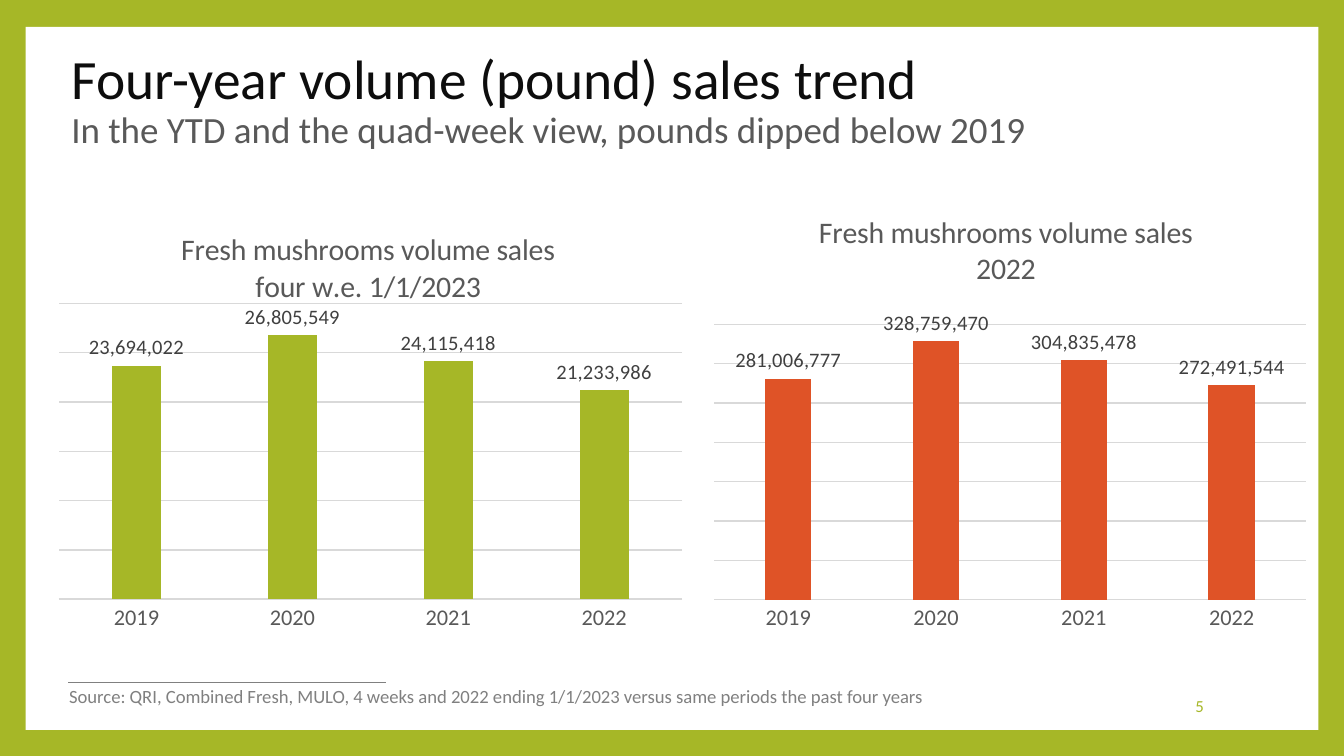
from lxml import etree
from pptx import Presentation
from pptx.chart.data import CategoryChartData
from pptx.dml.color import RGBColor
from pptx.enum import chart as ch, shapes, text
from pptx.oxml.ns import qn
from pptx.util import Pt

GREEN = RGBColor(0xA6, 0xB7, 0x27)
ORANGE = RGBColor(0xDF, 0x53, 0x27)
WHITE = RGBColor(0xFF, 0xFF, 0xFF)
INK = RGBColor(0x0D, 0x0D, 0x0D)
DARK = RGBColor(0x40, 0x40, 0x40)
BODY = RGBColor(0x59, 0x59, 0x59)
MUTED = RGBColor(0x80, 0x80, 0x80)
RULE = RGBColor(0xD9, 0xD9, 0xD9)
FONT = "Calibri"
YEARS = ["2019", "2020", "2021", "2022"]


def style(font, size, color):
    font.name, font.size, font.bold = FONT, Pt(size), False
    font.color.rgb = color


def add_run(paragraph, words, size, color):
    run = paragraph.add_run()
    run.text = words
    style(run.font, size, color)


def add_frame(slide, box):
    """White panel on the green ground, with the rule above the source."""
    slide.background.fill.solid()
    slide.background.fill.fore_color.rgb = GREEN
    panel = slide.shapes.add_shape(shapes.MSO_SHAPE.RECTANGLE, *map(Pt, box))
    panel.shadow.inherit = False
    panel.fill.solid()
    panel.fill.fore_color.rgb = WHITE
    panel.line.fill.background()
    # The panel goes behind the title placeholder
    slide.shapes.title._element.addprevious(panel._element)

    left, top, width, height = box
    x, y = left + 23, top + height - 25.4
    rule = slide.shapes.add_connector(
        shapes.MSO_CONNECTOR.STRAIGHT, Pt(x), Pt(y), Pt(x + 170), Pt(y))
    rule.line.color.rgb = MUTED
    rule.line.width = Pt(0.79)
    etree.SubElement(rule._element.spPr, qn("a:effectLst"))


def add_heading(slide, box, headline, subline):
    heading = slide.shapes.title
    heading.left, heading.top, heading.width, heading.height = map(Pt, box)
    frame = heading.text_frame
    frame.auto_size = text.MSO_AUTO_SIZE.NONE
    frame.vertical_anchor = text.MSO_ANCHOR.MIDDLE
    line = frame.paragraphs[0]
    line.alignment = text.PP_ALIGN.LEFT
    line.line_spacing = 0.9
    add_run(line, headline, 29.7, INK)
    line.add_line_break()
    add_run(line, subline, 19.8, BODY)


def add_note(slide, box, words, size, color, align, anchor, grow=False):
    frame = slide.shapes.add_textbox(*map(Pt, box)).text_frame
    frame.word_wrap = not grow
    if grow:
        frame.auto_size = text.MSO_AUTO_SIZE.SHAPE_TO_FIT_TEXT
    frame.vertical_anchor = anchor
    frame.paragraphs[0].alignment = align
    add_run(frame.paragraphs[0], words, size, color)


def set_layout(parent, index, **fractions):
    """Place a chart part by hand, in fractions of the chart's box."""
    layout = parent.find(qn("c:layout"))
    if layout is not None:
        parent.remove(layout)
    layout = etree.Element(qn("c:layout"))
    parent.insert(index, layout)
    manual = etree.SubElement(layout, qn("c:manualLayout"))
    if "h" in fractions:
        etree.SubElement(manual, qn("c:layoutTarget"), val="inner")
    for side in "xy":
        etree.SubElement(manual, qn(f"c:{side}Mode"), val="edge")
    for key, value in fractions.items():
        etree.SubElement(manual, qn(f"c:{key}"), val=str(value))


def add_volume_chart(slide, box, caption, pounds, color, peak, step,
                     caption_at, plot_y, plot_h):
    data = CategoryChartData(number_format="#,##0")
    data.categories = YEARS
    data.add_series("Series 1", pounds)
    chart = slide.shapes.add_chart(
        ch.XL_CHART_TYPE.COLUMN_CLUSTERED, *map(Pt, box), data).chart
    chart.has_legend = False
    chart.font.name, chart.font.size = FONT, Pt(10)

    # Caption
    frame = chart.chart_title.text_frame
    for i, words in enumerate(caption):
        line = frame.add_paragraph() if i else frame.paragraphs[0]
        add_run(line, words, 16, BODY)
    chart.chart_title.include_in_layout = False
    set_layout(chart.chart_title._element, 1, x=caption_at[0], y=caption_at[1])
    plot_area = chart._chartSpace.chart.plotArea
    set_layout(plot_area, 0, x=0, y=plot_y, w=1, h=plot_h)

    # Axes
    years = chart.category_axis
    years.major_tick_mark = ch.XL_TICK_MARK.NONE
    style(years.tick_labels.font, 12, BODY)
    volume = chart.value_axis
    volume.minimum_scale, volume.maximum_scale = 0, peak
    volume.major_unit = step
    volume.has_major_gridlines = True
    volume.visible = False
    for line in (years.format.line, volume.major_gridlines.format.line):
        line.color.rgb = RULE
        line.width = Pt(0.75)

    # Columns and their labels
    plot = chart.plots[0]
    plot.gap_width, plot.overlap = 219, -27
    plot.vary_by_categories = False
    columns = plot.series[0]
    columns.format.fill.solid()
    columns.format.fill.fore_color.rgb = color
    labels = columns.data_labels
    labels.show_value = True
    labels.position = ch.XL_LABEL_POSITION.OUTSIDE_END
    labels.number_format, labels.number_format_is_linked = "#,##0", False
    style(labels.font, 11, DARK)


def main():
    prs = Presentation()
    prs.slide_width, prs.slide_height = Pt(720), Pt(405)
    slide = prs.slides.add_slide(prs.slide_layouts[5])

    add_frame(slide, (13.7, 14.4, 692.6, 376.6))
    add_heading(slide, (31, 26, 669, 57),
                "Four-year volume (pound) sales trend",
                "In the YTD and the quad-week view, pounds dipped below 2019")
    add_note(slide, (551, 367, 101, 22), "5", 9, GREEN,
             text.PP_ALIGN.RIGHT, text.MSO_ANCHOR.MIDDLE)
    add_note(slide, (30, 363.6, 477, 19.5),
             "Source: QRI, Combined Fresh, MULO, 4 weeks and 2022 ending "
             "1/1/2023 versus same periods the past four years", 10, MUTED,
             text.PP_ALIGN.LEFT, text.MSO_ANCHOR.TOP, grow=True)

    add_volume_chart(slide, (31, 111.6, 334.8, 238.3),
                     ("Fresh mushrooms volume sales", "four w.e. 1/1/2023"),
                     (23694022, 26805549, 24115418, 21233986),
                     GREEN, 30_000_000, 5_000_000, (0.19, 0.04), 0.214, 0.665)
    add_volume_chart(slide, (382.3, 111.6, 317.5, 238.3),
                     ("Fresh mushrooms volume sales", "2022"),
                     (281006777, 328759470, 304835478, 272491544),
                     ORANGE, 350_000_000, 50_000_000, (0.17, 0), 0.261, 0.619)
    prs.save("out.pptx")


if __name__ == "__main__":
    main()
